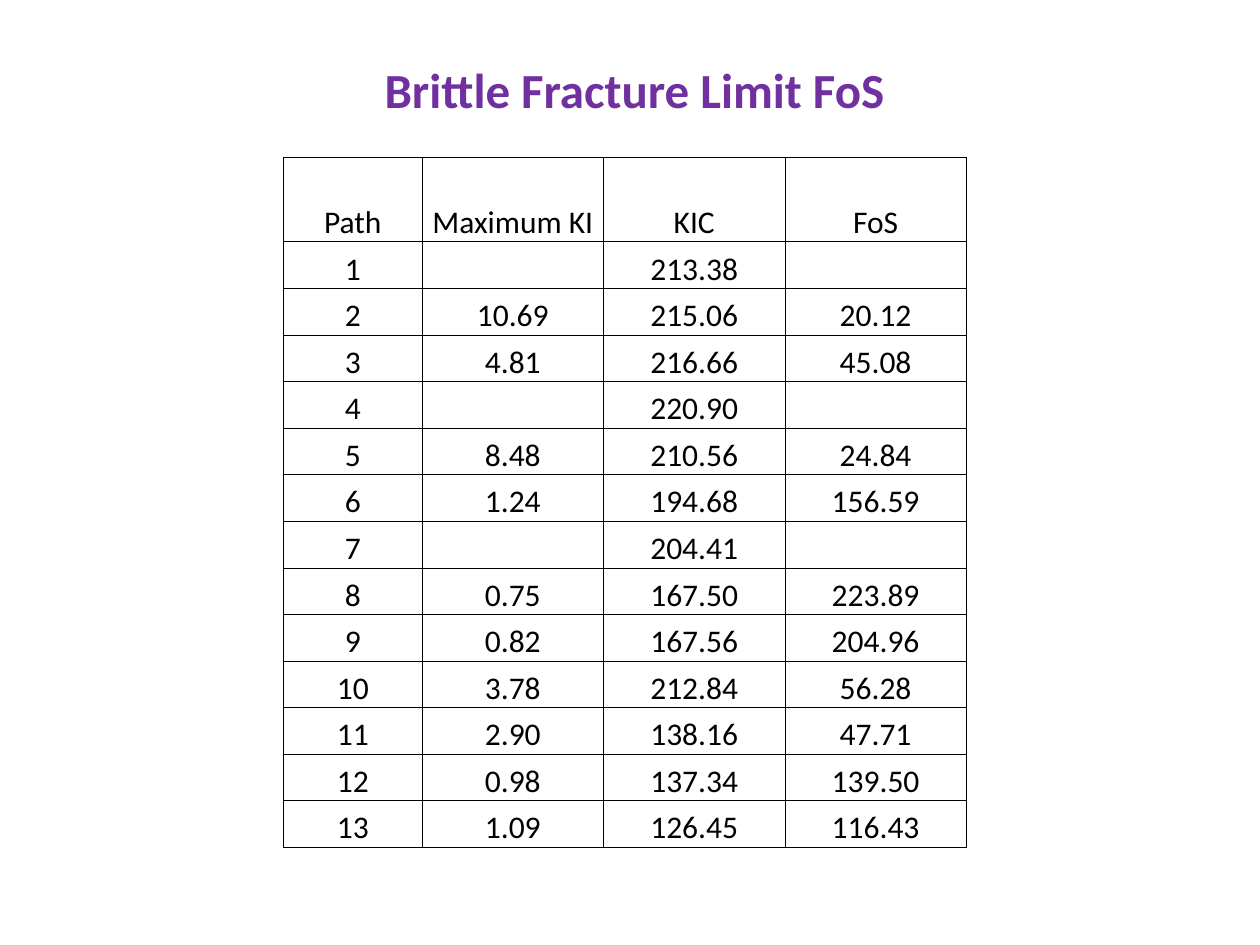
"""Build the slide that tabulates the brittle fracture factor of safety by path."""
from dataclasses import dataclass

from lxml import etree
from pptx import Presentation
from pptx.dml.color import RGBColor
from pptx.enum import text
from pptx.oxml import ns
from pptx.util import Inches, Pt


@dataclass
class Theme:
    font: str = "Calibri"
    title_color: str = "7030A0"
    ink: str = "000000"
    title_size: int = 28
    table_size: int = 18
    border: float = 0.5


theme = Theme()


def format_paragraph(para, size, color, bold=False):
    para.alignment = text.PP_ALIGN.CENTER
    para.font.name = theme.font
    para.font.size = Pt(size)
    para.font.bold = bold
    para.font.color.rgb = RGBColor.from_string(color)


def add_borders(cell):
    properties = cell._tc.get_or_add_tcPr()
    for index, side in enumerate(("lnL", "lnR", "lnT", "lnB")):
        line = etree.Element(ns.qn(f"a:{side}"), w=str(Pt(theme.border)))
        fill = etree.SubElement(line, ns.qn("a:solidFill"))
        etree.SubElement(fill, ns.qn("a:srgbClr"), val=theme.ink)
        properties.insert(index, line)


rows = [
    ("Path", "Maximum KI", "KIC", "FoS"),
    ("1", "", "213.38", ""),
    ("2", "10.69", "215.06", "20.12"),
    ("3", "4.81", "216.66", "45.08"),
    ("4", "", "220.90", ""),
    ("5", "8.48", "210.56", "24.84"),
    ("6", "1.24", "194.68", "156.59"),
    ("7", "", "204.41", ""),
    ("8", "0.75", "167.50", "223.89"),
    ("9", "0.82", "167.56", "204.96"),
    ("10", "3.78", "212.84", "56.28"),
    ("11", "2.90", "138.16", "47.71"),
    ("12", "0.98", "137.34", "139.50"),
    ("13", "1.09", "126.45", "116.43"),
]
column_widths = [1.1, 1.44, 1.44, 1.44]
row_heights = [0.67] + [0.37] * (len(rows) - 1)

deck = Presentation()
deck.slide_width, deck.slide_height = Inches(10), Inches(7.5)
page = deck.slides.add_slide(deck.slide_layouts.get_by_name("Title Only"))

title = page.shapes.title
title.left, title.top = Inches(2.92), Inches(0.42)
title.width, title.height = Inches(4.23), Inches(0.57)
title.text_frame.text = "Brittle Fracture Limit FoS"
title.text_frame.word_wrap = False
title.text_frame.vertical_anchor = text.MSO_ANCHOR.TOP
title.text_frame.auto_size = text.MSO_AUTO_SIZE.SHAPE_TO_FIT_TEXT
format_paragraph(title.text_frame.paragraphs[0], theme.title_size, theme.title_color, True)

table = page.shapes.add_table(
    len(rows), len(column_widths), Inches(2.25), Inches(1.25),
    Inches(sum(column_widths)), Inches(sum(row_heights)),
).table
table.first_row = table.horz_banding = False
for column, width in zip(table.columns, column_widths):
    column.width = Inches(width)

for row, height, values in zip(table.rows, row_heights, rows):
    row.height = Inches(height)
    for cell, value in zip(row.cells, values):
        cell.text = value
        cell.fill.background()
        cell.vertical_anchor = text.MSO_ANCHOR.BOTTOM
        cell.margin_left = cell.margin_right = cell.margin_top = Inches(0.01)
        cell.margin_bottom = Inches(0)
        format_paragraph(cell.text_frame.paragraphs[0], theme.table_size, theme.ink)
        add_borders(cell)

deck.save("out.pptx")
